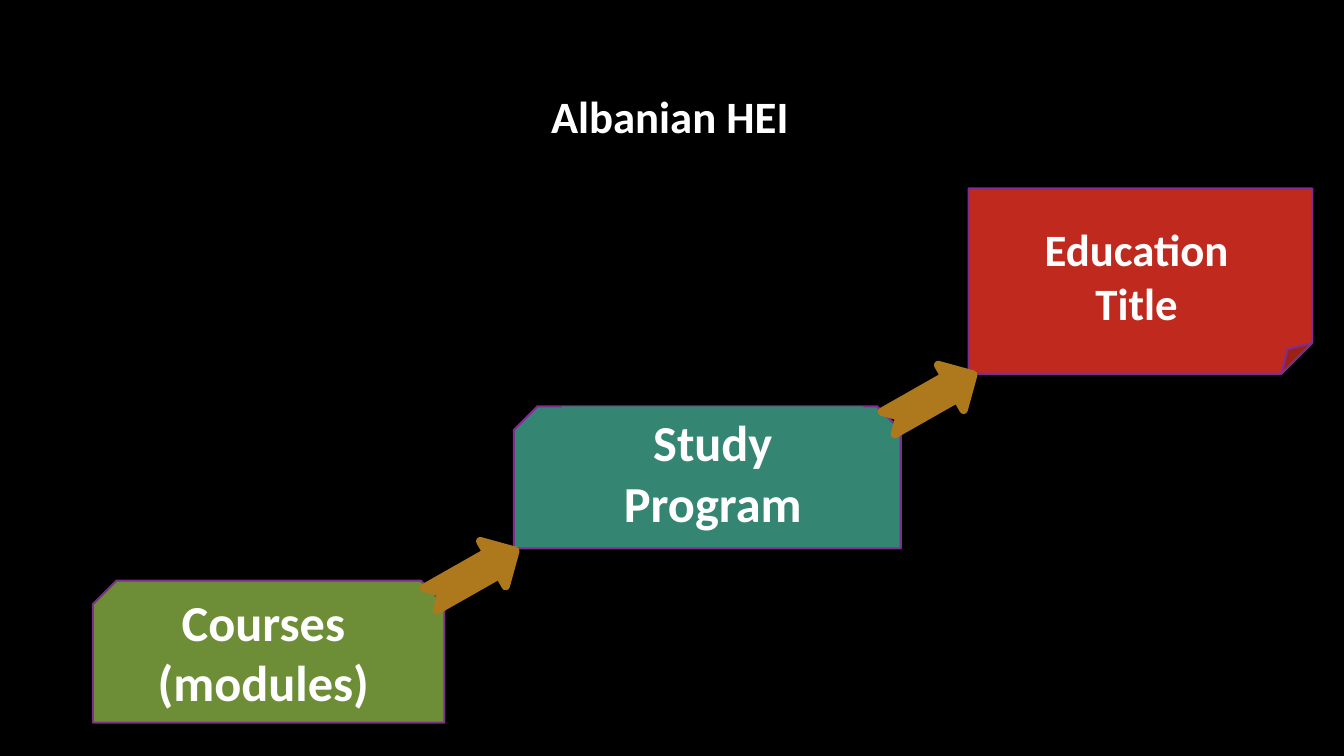
import pptx
import pptx.util
import pptx.dml.color
import pptx.enum.shapes
import pptx.enum.text
import pptx.oxml.ns
from lxml import etree

Cm, Pt = pptx.util.Cm, pptx.util.Pt
RGBColor = pptx.dml.color.RGBColor
MSO_SHAPE = pptx.enum.shapes.MSO_SHAPE
MSO_ANCHOR = pptx.enum.text.MSO_ANCHOR
qn = pptx.oxml.ns.qn

BLACK = RGBColor(0x00, 0x00, 0x00)
WHITE = RGBColor(0xFF, 0xFF, 0xFF)
RED = RGBColor(0xC0, 0x2A, 0x1E)
TEAL = RGBColor(0x34, 0x86, 0x72)
GREEN = RGBColor(0x6D, 0x8E, 0x37)
PURPLE = RGBColor(0x7F, 0x2E, 0x8F)
OCHRE = RGBColor(0xAE, 0x78, 0x1D)

# Content: boxes are left, top, width, height in cm
TITLE = "Albanian HEI"
TITLE_BOX = (11.35, 2.11, 11.07, 1.63)
SNIP, FOLD = MSO_SHAPE.SNIP_2_SAME_RECTANGLE, MSO_SHAPE.FOLDED_CORNER
# lines, size, preset, colour, step box, label box, label is filled
STEPS = [
    (["Education Title"], 32, FOLD, RED,
     (24.41, 4.75, 8.66, 4.67), (25.43, 5.46, 6.43, 3), False),
    (["Study Program"], 36, SNIP, TEAL,
     (12.95, 10.24, 9.75, 3.58), (14.17, 10.24, 7.59, 3.33), True),
    (["Courses", "(modules)"], 36, SNIP, GREEN,
     (2.34, 14.63, 8.86, 3.58), (3.2, 14.76, 6.88, 3.33), True),
]
ARROW_SIZE = (2.46, 1.3)
ARROW_ANGLE = 330.4
ARROWS = [(22.23, 9.4), (10.69, 13.84)]


def lengths(box):
    return [Cm(v) for v in box]


def write(tf, lines, size):
    tf.word_wrap = True
    tf.vertical_anchor = MSO_ANCHOR.TOP
    for i, line in enumerate(lines):
        p = tf.paragraphs[0] if i == 0 else tf.add_paragraph()
        p.text = line
        p.alignment = pptx.enum.text.PP_ALIGN.CENTER
        p.font.name = "Calibri"
        p.font.size = Pt(size)
        p.font.bold = True
        p.font.color.rgb = WHITE


def add_block(shapes, preset, box, fill, line, width):
    sp = shapes.add_shape(preset, *lengths(box))
    sp.shadow.inherit = False
    sp.fill.solid()
    sp.fill.fore_color.rgb = fill
    sp.line.color.rgb = line
    sp.line.width = Pt(width)
    return sp


prs = pptx.Presentation()
prs.slide_width, prs.slide_height = Cm(33.87), Cm(19.05)
s = prs.slides.add_slide(prs.slide_layouts[5])
s.background.fill.solid()
s.background.fill.fore_color.rgb = BLACK

# Title
title = s.shapes.title
title.left, title.top, title.width, title.height = lengths(TITLE_BOX)
write(title.text_frame, [TITLE], 32)

# Steps, each a block grouped with its label
for lines, size, preset, colour, box, label_box, filled in STEPS:
    group = s.shapes.add_group_shape()
    add_block(group.shapes, preset, box, colour, PURPLE, 1.5)
    label = group.shapes.add_textbox(*lengths(label_box))
    if filled:
        label.fill.solid()
        label.fill.fore_color.rgb = colour
    write(label.text_frame, lines, size)

# Arrows between steps, with rounded corners
for left, top in ARROWS:
    arrow = add_block(s.shapes, MSO_SHAPE.NOTCHED_RIGHT_ARROW,
                      (left, top, *ARROW_SIZE), OCHRE, OCHRE, 6)
    arrow.rotation = ARROW_ANGLE
    etree.SubElement(arrow._element.spPr.find(qn("a:ln")), qn("a:round"))

prs.save("out.pptx")
